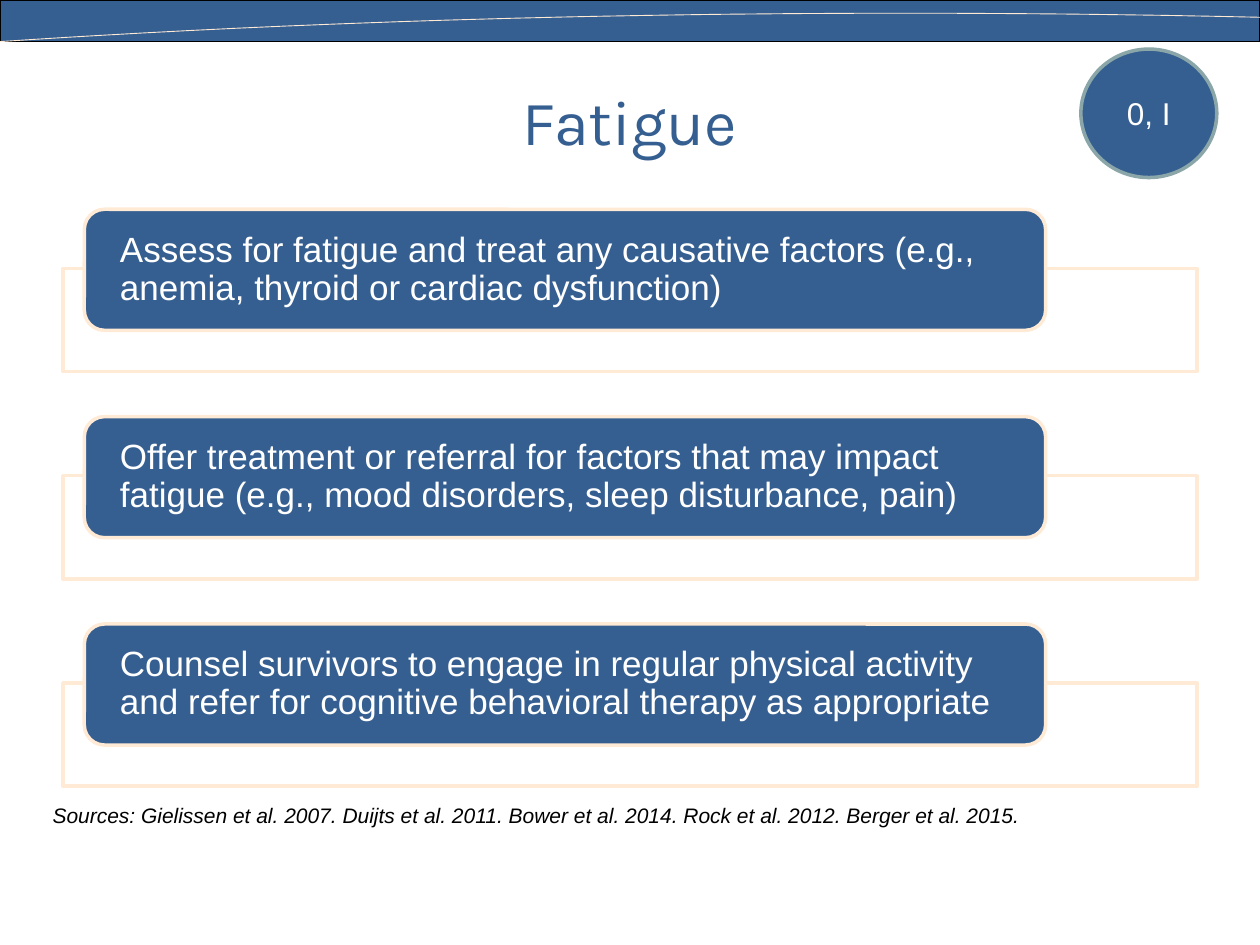
import pptx
import pptx.dml.color
import pptx.enum.shapes
import pptx.enum.text
import pptx.oxml.ns
import pptx.util
from lxml import etree

Cm = pptx.util.Cm
Pt = pptx.util.Pt
RGBColor = pptx.dml.color.RGBColor
Shape = pptx.enum.shapes.MSO_SHAPE
Align = pptx.enum.text.PP_ALIGN
Anchor = pptx.enum.text.MSO_ANCHOR

BLUE = RGBColor(0x36, 0x5F, 0x91)
PEACH = RGBColor(0xFF, 0xEA, 0xD5)
SAGE = RGBColor(0x8A, 0xA6, 0xA8)
WHITE = RGBColor(0xFF, 0xFF, 0xFF)
BLACK = RGBColor(0, 0, 0)

RECOMMENDATIONS = [
    "Assess for fatigue and treat any causative factors (e.g., anemia, thyroid or cardiac dysfunction)",
    "Offer treatment or referral for factors that may impact fatigue (e.g., mood disorders, sleep disturbance, pain)",
    "Counsel survivors to engage in regular physical activity and refer for cognitive behavioral therapy as appropriate",
]
SOURCES = ("Sources: Gielissen et al. 2007. Duijts et al. 2011. Bower et al. 2014. "
           "Rock et al. 2012. Berger et al. 2015.")


def write_text(shape, text, size=20, color=WHITE, font="Arial", italic=False,
               align=Align.LEFT, anchor=Anchor.MIDDLE, spacing=None, margins=None):
    frame = shape.text_frame
    frame.word_wrap = True
    frame.vertical_anchor = anchor
    if margins:
        frame.margin_left = frame.margin_right = Cm(margins[0])
        frame.margin_top = frame.margin_bottom = Cm(margins[1])
    paragraph = frame.paragraphs[0]
    paragraph.alignment = align
    paragraph.line_spacing = spacing
    run = paragraph.add_run()
    run.text = text
    run.font.name = font
    run.font.size = Pt(size)
    run.font.italic = italic
    run.font.color.rgb = color


class SlideBuilder:
    """Holds the slide and draws its elements; lengths are in centimetres."""

    def __init__(self, slide):
        self.slide = slide
        self.fill = BLUE
        self.line = PEACH
        self.line_width = 2

    def title(self, text, left, top, width, height):
        title = self.slide.shapes.title
        title.left, title.top = Cm(left), Cm(top)
        title.width, title.height = Cm(width), Cm(height)
        write_text(title, text, size=36, color=BLUE, font="Karla", align=Align.CENTER)

    def box(self, kind, left, top, width, height, fill=None, line=None,
            line_width=None, opacity=None):
        shape = self.slide.shapes.add_shape(kind, Cm(left), Cm(top), Cm(width), Cm(height))
        shape.shadow.inherit = False
        shape.fill.solid()
        shape.fill.fore_color.rgb = self.fill if fill is None else fill
        shape.line.color.rgb = self.line if line is None else line
        shape.line.width = Pt(line_width or self.line_width)
        if opacity:
            color = shape.fill._xPr.find(".//" + pptx.oxml.ns.qn("a:srgbClr"))
            etree.SubElement(color, pptx.oxml.ns.qn("a:alpha"), val=str(opacity * 1000))
        return shape

    def curve(self, controls, steps=60):
        """Draw a cubic Bezier curve as a fine open line."""
        points = []
        for step in range(steps + 1):
            t = step / steps
            weights = ((1 - t) ** 3, 3 * t * (1 - t) ** 2, 3 * t ** 2 * (1 - t), t ** 3)
            points.append(tuple(Cm(sum(w * point[axis] for w, point in zip(weights, controls)))
                                for axis in (0, 1)))
        builder = self.slide.shapes.build_freeform(*points[0])
        builder.add_line_segments(points[1:], close=False)
        shape = builder.convert_to_shape()
        shape.shadow.inherit = False
        shape.fill.background()
        shape.line.color.rgb = self.line
        shape.line.width = Pt(0.5)

    def text(self, text, left, top, width, height, **style):
        shape = self.slide.shapes.add_textbox(Cm(left), Cm(top), Cm(width), Cm(height))
        write_text(shape, text, **style)


def main():
    presentation = pptx.Presentation()
    presentation.slide_width, presentation.slide_height = Cm(25.4), Cm(19.05)
    slide = presentation.slides.add_slide(presentation.slide_layouts[5])
    builder = SlideBuilder(slide)

    # Header band and title
    builder.box(Shape.RECTANGLE, 0, 0, 25.4, 0.84, line=BLACK, line_width=0.75)
    builder.curve([(25.4, 0.35), (18.9, 0.2), (9.63, 0.2), (0, 0.84)])
    builder.title("Fatigue", 1.27, 0.84, 22.86, 3.18)

    # Recommendations: a wide frame behind each rounded label
    for index, recommendation in enumerate(RECOMMENDATIONS):
        top = 4.22 + index * 4.18
        builder.box(Shape.RECTANGLE, 1.27, top + 1.19, 22.86, 2.08, fill=WHITE, opacity=90)
        label = builder.box(Shape.ROUNDED_RECTANGLE, 1.7, top, 19.38, 2.44)
        write_text(label, recommendation, spacing=0.9, margins=(0.6, 0))

    # Evidence badge
    badge = builder.box(Shape.OVAL, 21.79, 0.99, 2.74, 2.59, line=SAGE)
    write_text(badge, "0, I", size=18, align=Align.CENTER)

    # Sources
    builder.text(SOURCES, 0.81, 16.05, 24.13, 0.76, size=12, color=BLACK,
                 italic=True, anchor=Anchor.TOP)

    presentation.save("out.pptx")


if __name__ == "__main__":
    main()
